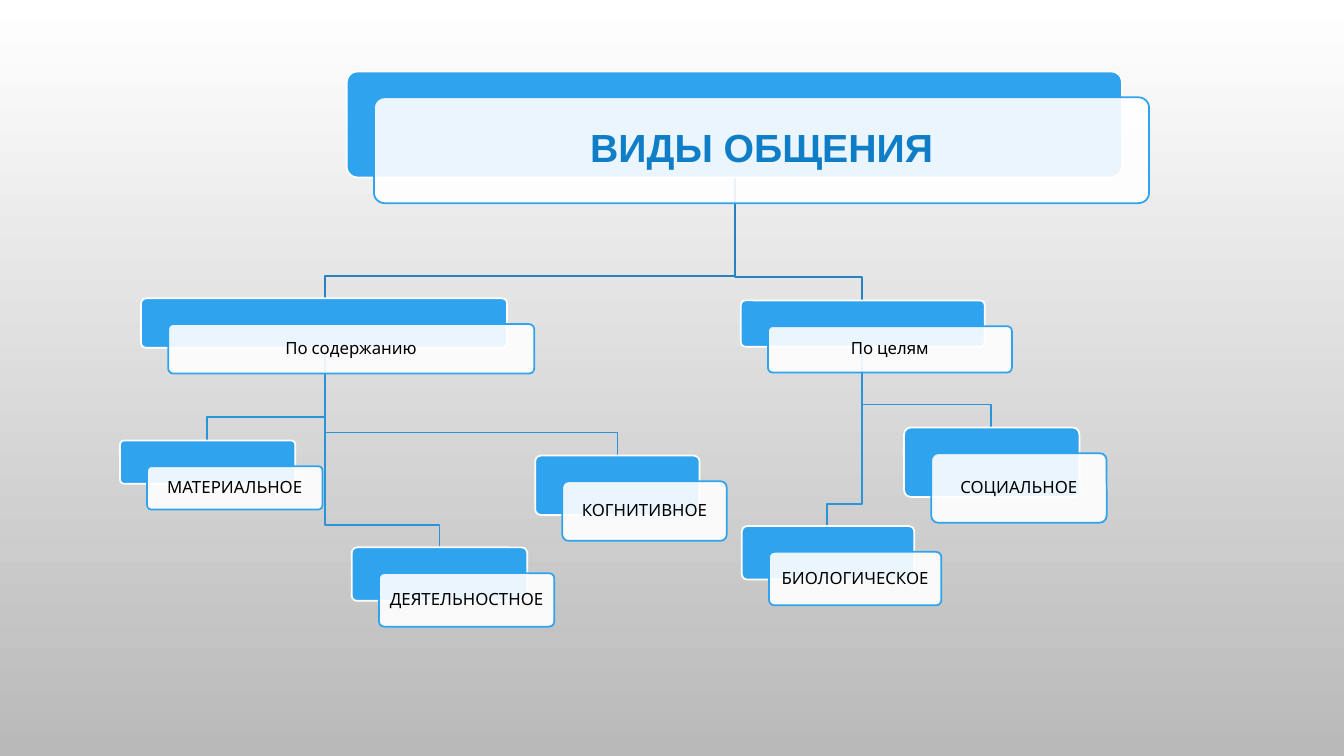
"""Draw the tree of kinds of communication as offset double cards joined by elbow lines."""
from dataclasses import dataclass
from typing import Any, Optional

from lxml import etree
from pptx import Presentation
from pptx import util as u
from pptx.dml import color
from pptx.enum import shapes, text
from pptx.oxml import ns

BLUE, WHITE = "2FA3EE", "FFFFFF"
SHIFT_X, SHIFT_Y = 19.4, 18.4
ELBOW_DROP = 16.2
LINE_WIDTH = 1.25
TITLE_FONT = {"name": "Arial", "size": u.Pt(28), "bold": True}
LABEL_FONT = {"name": "Cabin", "size": u.Pt(12), "bold": False}


@dataclass(frozen=True)
class Card:
    label: str
    left: float
    top: float
    width: float
    height: float
    parent: Optional["Card"] = None
    font: str = "000000"
    line: str = "2B94D8"
    inset: float = 3.6

    @property
    def centre(self) -> float:
        return self.left + self.width / 2

    @property
    def bottom(self) -> float:
        return self.top + self.height


TITLE = Card("ВИДЫ ОБЩЕНИЯ", 247.7, 51.1, 553.7, 75.6, font="107EC6", inset=8.64)
CONTENT = Card("По содержанию", 100.8, 213.1, 261.4, 35.3, TITLE, line="2683BF")
GOALS = Card("По целям", 529.2, 214.6, 174.2, 33.1, TITLE, line="2683BF")
CARDS = [
    TITLE,
    CONTENT,
    Card("МАТЕРИАЛЬНОЕ", 85.7, 314.6, 125.3, 31, CONTENT),
    Card("ДЕЯТЕЛЬНОСТНОЕ", 251.3, 391, 125.3, 38.2, CONTENT),
    Card("КОГНИТИВНОЕ", 382.3, 325.4, 117.4, 42.5, CONTENT),
    GOALS,
    Card("БИОЛОГИЧЕСКОЕ", 529.9, 375.8, 123.1, 38.2, GOALS),
    Card("СОЦИАЛЬНОЕ", 645.8, 305.3, 125.3, 49.7, GOALS),
]


def rgb(value: str) -> color.RGBColor:
    return color.RGBColor.from_string(value)


def apply(target: Any, values: dict[str, Any]) -> None:
    for name, value in values.items():
        setattr(target, name, value)


def outline(shape: Any, value: str) -> None:
    shape.shadow.inherit = False
    shape.line.color.rgb = rgb(value)
    shape.line.width = u.Pt(LINE_WIDTH)


def draw_background(page: Any) -> None:
    fill = page.background.fill
    fill.gradient()
    fill.gradient_angle = 270
    for stop, value in zip(fill.gradient_stops, (WHITE, "B9B9B9")):
        stop.color.rgb = rgb(value)


def draw_elbow(page: Any, parent: Card, child: Card) -> None:
    turn = child.top - ELBOW_DROP
    points = [(parent.centre, turn), (child.centre, turn), (child.centre, child.top)]
    builder = page.shapes.build_freeform(parent.centre, parent.bottom, scale=u.Pt(1))
    builder.add_line_segments(points, close=False)
    elbow = builder.convert_to_shape()
    elbow.fill.background()
    outline(elbow, child.line)


def draw_box(page: Any, card: Card, steps: int, fill: str, line: str) -> Any:
    box = page.shapes.add_shape(
        shapes.MSO_SHAPE.ROUNDED_RECTANGLE,
        u.Pt(card.left + steps * SHIFT_X),
        u.Pt(card.top + steps * SHIFT_Y),
        u.Pt(card.width),
        u.Pt(card.height),
    )
    box.adjustments[0] = 0.1
    box.fill.solid()
    box.fill.fore_color.rgb = rgb(fill)
    outline(box, line)
    return box


def draw_card(page: Any, card: Card) -> None:
    draw_box(page, card, 0, BLUE, WHITE)
    box = draw_box(page, card, 1, WHITE, BLUE)
    tint = box.fill._xPr.find(ns.qn("a:solidFill")).find(ns.qn("a:srgbClr"))
    etree.SubElement(tint, ns.qn("a:alpha"), val="90000")
    frame = box.text_frame
    apply(frame, {"word_wrap": True, "vertical_anchor": text.MSO_ANCHOR.MIDDLE})
    sides = ("left", "top", "right", "bottom")
    apply(frame, {f"margin_{side}": u.Pt(card.inset) for side in sides})
    para = frame.paragraphs[0]
    apply(para, {"alignment": text.PP_ALIGN.CENTER, "line_spacing": 0.9})
    span = para.add_run()
    span.text = card.label
    apply(span.font, LABEL_FONT if card.parent else TITLE_FONT)
    span.font.color.rgb = rgb(card.font)


def main() -> None:
    deck = Presentation()
    apply(deck, {"slide_width": u.Pt(960), "slide_height": u.Pt(540)})
    page = deck.slides.add_slide(deck.slide_layouts[6])
    draw_background(page)
    for card in reversed(CARDS):
        if card.parent:
            draw_elbow(page, card.parent, card)
    for card in CARDS:
        draw_card(page, card)
    deck.save("out.pptx")


if __name__ == "__main__":
    main()
